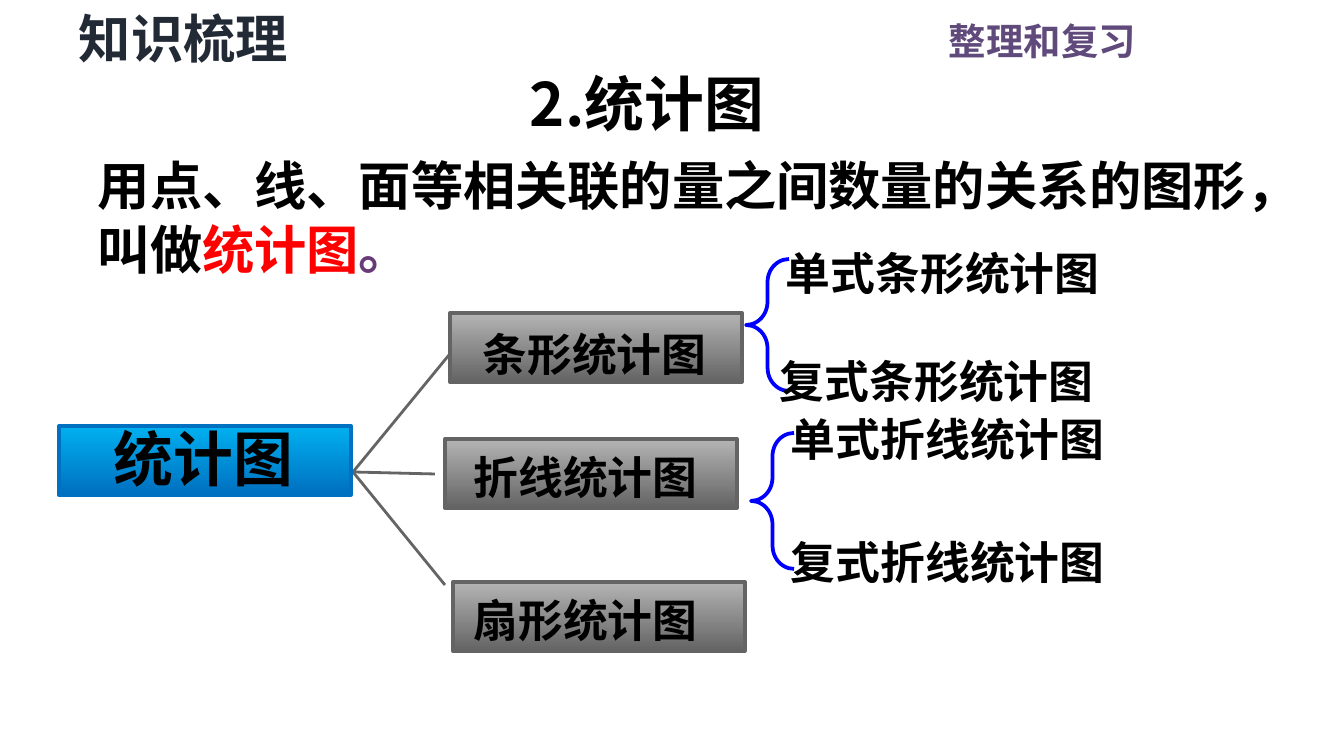
import pptx
import pptx.util
import pptx.dml.color
import pptx.enum.shapes
import pptx.enum.text
import pptx.oxml.ns
from lxml import etree

SCALE = 914400 / 134.4  # EMU per px
FONT = "Noto Sans CJK SC"
BLACK, GREY = "000000", "646464"
GREY_FILL = ("B4B4B4", GREY)
BLUE_FILL = ("00B0F0", "0070C0")
LEFT = pptx.enum.text.PP_ALIGN.LEFT
CENTER = pptx.enum.text.PP_ALIGN.CENTER
RIGHT = pptx.enum.text.PP_ALIGN.RIGHT
SHAPE = pptx.enum.shapes.MSO_SHAPE


def px(n):
    return round(n * SCALE)


def rgb(value):
    return pptx.dml.color.RGBColor.from_string(value)


def add_text(s, box, runs, size, align=LEFT, inset=13, spacing=None):
    """Bold one-paragraph text; runs is a list of (text, colour)."""
    tf = s.shapes.add_textbox(*map(px, box)).text_frame
    tf.word_wrap = True
    tf.margin_left = tf.margin_right = px(inset)
    p = tf.paragraphs[0]
    p.alignment = align
    if spacing:
        p.line_spacing = pptx.util.Pt(spacing)
    for text, colour in runs:
        r = p.add_run()
        r.text = text
        r.font.color.rgb = rgb(colour)
        # East Asian glyphs take their typeface from a:ea
        ea = etree.SubElement(r.font._element, pptx.oxml.ns.qn("a:ea"))
        ea.set("typeface", FONT)
    p.font.size = pptx.util.Pt(size)
    p.font.bold = True
    p.font.name = FONT
    for r in p.runs:
        r.font.size, r.font.bold = p.font.size, True


def add_outline(shape, colour, width):
    shape.line.color.rgb = rgb(colour)
    shape.line.width = pptx.util.Pt(width)


def add_node(s, box, text, label, fill, size, align=CENTER):
    """Gradient box; label is the text area relative to the box corner."""
    x, y, w, h = box
    dx, dy, label_w, label_h = label
    sp = s.shapes.add_shape(SHAPE.RECTANGLE, *map(px, box))
    sp.shadow.inherit = False
    sp.fill.gradient()
    sp.fill.gradient_angle = 270
    for stop, position, colour in zip(sp.fill.gradient_stops, (0, 1), fill):
        stop.position = position
        stop.color.rgb = rgb(colour)
    add_outline(sp, fill[1], 2)
    add_text(s, (x + dx, y + dy, label_w, label_h), [(text, BLACK)], size, align)


def add_line(s, start, end):
    line = s.shapes.add_connector(pptx.enum.shapes.MSO_CONNECTOR.STRAIGHT,
                                  *map(px, start + end))
    add_outline(line, GREY, 1.5)
    etree.SubElement(line._element.spPr, pptx.oxml.ns.qn("a:effectLst"))


def add_brace(s, box, labels):
    """Left brace; labels are (dx, dy, text) from the brace corner."""
    x, y = box[:2]
    sp = s.shapes.add_shape(SHAPE.LEFT_BRACE, *map(px, box))
    sp.shadow.inherit = False
    sp.fill.background()
    sp.adjustments[0] = 0.54
    add_outline(sp, "0000FF", 2)
    for dx, dy, text in labels:
        add_text(s, (x + dx, y + dy, 372, 67), [(text, BLACK)], 24)


def add_header(s, x, y):
    add_text(s, (x + 778, y + 12, 371, 59), [("整理和复习", "604A7B")], 20, RIGHT)
    add_text(s, (x + 69, y, 271, 74), [("知识梳理", "222A35")], 28, inset=10)


def add_definition(s, x, y):
    add_text(s, (x + 435, y, 364, 82), [("2.统计图", BLACK)], 32, inset=10)
    add_text(s, (x, y + 86, 1191, 141),
             [("用点、线、面等相关联的量之间数量的关系的图形，叫做", BLACK),
              ("统计图", "FF0000"), ("。", "673B77")], 28, spacing=34)


def add_tree(s, x, y):
    # Branches from the root
    hub = (x + 294, y + 213)
    for dx, dy in ((96, -117), (82, 2), (92, 113)):
        add_line(s, hub, (hub[0] + dx, hub[1] + dy))

    # Root and chart kinds
    w, h = 292, 69
    add_node(s, (x, y + 167, w, h), "统计图", (42, -11, w, 86), BLUE_FILL, 32, LEFT)
    for dx, dy, text, label_dx, label_dy in (
            (391, 54, "条形统计图", 12, 7),
            (386, 180, "折线统计图", 8, 4),
            (394, 323, "扇形统计图", 0, 4)):
        add_node(s, (x + dx, y + dy, w, h), text,
                 (label_dx, label_dy, 265, 67), GREY_FILL, 24)

    # Subtypes
    add_brace(s, (x + 687, y, 43, 132),
              ((27, -20, "单式条形统计图"), (21, 88, "复式条形统计图")))
    add_brace(s, (x + 692, y + 174, 43, 136),
              ((27, -28, "单式折线统计图"), (27, 95, "复式折线统计图")))


def main():
    prs = pptx.Presentation()
    prs.slide_width, prs.slide_height = px(1344), px(756)
    s = prs.slides.add_slide(prs.slide_layouts[6])
    add_header(s, 0, 0)
    add_definition(s, 85, 60)
    add_tree(s, 59, 259)
    prs.save("out.pptx")


if __name__ == "__main__":
    main()
